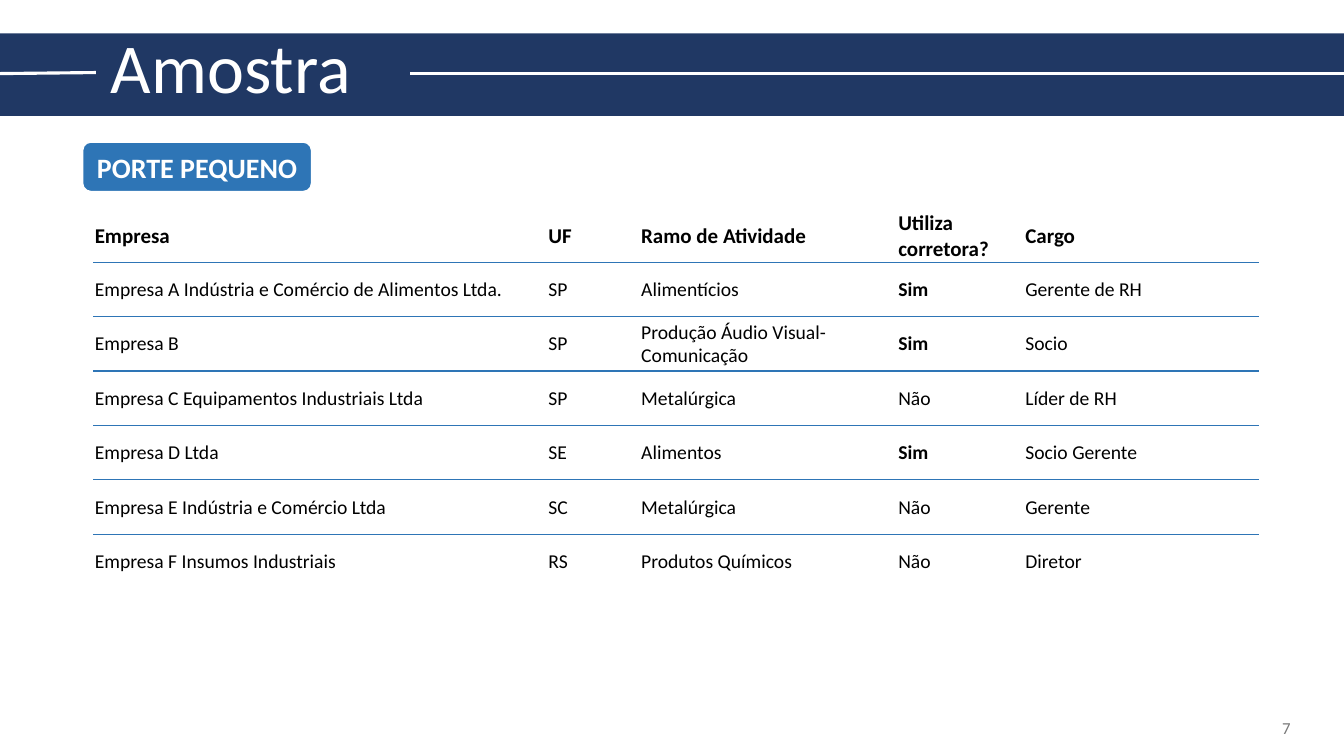
"""Build the sample slide listing the small companies surveyed."""
from lxml.etree import SubElement
from pptx import Presentation
from pptx.dml.color import RGBColor
from pptx.enum.shapes import MSO_CONNECTOR, MSO_SHAPE
from pptx.enum.text import MSO_ANCHOR, MSO_AUTO_SIZE, PP_ALIGN
from pptx.oxml.ns import qn
from pptx.util import Inches, Pt

FONT = "Calibri"
NAVY, BLUE, WHITE, BLACK, GRAY = "203864", "2E75B6", "FFFFFF", "000000", "797979"
COLUMN_WIDTHS = [4.5, 0.92, 2.55, 1.26, 2.32]
HEADER_HEIGHT, ROW_HEIGHT = 0.41, 0.54
ROWS = [
    ["Empresa", "UF", "Ramo de Atividade", "Utiliza corretora?", "Cargo"],
    ["Empresa A Indústria e Comércio de Alimentos Ltda.", "SP", "Alimentícios", "Sim", "Gerente de RH"],
    ["Empresa B", "SP", "Produção Áudio Visual-Comunicação", "Sim", "Socio"],
    ["Empresa C Equipamentos Industriais Ltda", "SP", "Metalúrgica", "Não", "Líder de RH"],
    ["Empresa D Ltda", "SE", "Alimentos", "Sim", "Socio Gerente"],
    ["Empresa E Indústria e Comércio Ltda", "SC", "Metalúrgica", "Não", "Gerente"],
    ["Empresa F Insumos Industriais", "RS", "Produtos Químicos", "Não", "Diretor"],
]


def color(value):
    return RGBColor.from_string(value)


def place(shape, left, top, width, height):
    shape.left, shape.top = Inches(left), Inches(top)
    shape.width, shape.height = Inches(width), Inches(height)


def write(text_frame, text, size, text_color, bold=False, align=PP_ALIGN.LEFT):
    text_frame.text = text
    paragraph = text_frame.paragraphs[0]
    paragraph.alignment = align
    font = paragraph.font
    font.name, font.size, font.bold = FONT, Pt(size), bold
    font.color.rgb = color(text_color)
    return paragraph


def add_block(slide, kind, box, fill, line=None):
    shape = slide.shapes.add_shape(kind, *map(Inches, box))
    shape.shadow.inherit = False
    shape.fill.solid()
    shape.fill.fore_color.rgb = color(fill)
    if line:
        shape.line.color.rgb = color(line)
        shape.line.width = Pt(1)
    else:
        shape.line.fill.background()
    return shape


def add_rule(slide, *ends):
    rule = slide.shapes.add_connector(MSO_CONNECTOR.STRAIGHT, *map(Inches, ends))
    rule.line.color.rgb = color(WHITE)
    rule.line.width = Pt(2.25)
    SubElement(rule._element.spPr, qn("a:effectLst"))


def add_title(slide, text):
    title = slide.shapes.title
    place(title, 1, 0.46, 10.65, 0.71)
    frame = title.text_frame
    frame.auto_size = MSO_AUTO_SIZE.NONE
    frame.vertical_anchor = MSO_ANCHOR.TOP
    write(frame, text, 50, WHITE).line_spacing = Pt(40)
    slide.shapes._spTree.append(title._element)


def set_borders(cell, top, bottom):
    properties = cell._tc.get_or_add_tcPr()
    sides = {"a:lnL": WHITE, "a:lnR": WHITE, "a:lnT": top, "a:lnB": bottom}
    for tag, value in sides.items():
        border = SubElement(properties, qn(tag), w=str(Pt(1)))
        fill = SubElement(border, qn("a:solidFill"))
        SubElement(fill, qn("a:srgbClr"), val=value)


def fill_cell(cell, text, row_index):
    is_header = row_index == 0
    is_last = row_index == len(ROWS) - 1
    cell.margin_left = cell.margin_right = cell.margin_top = Inches(0.01)
    cell.margin_bottom = 0
    cell.vertical_anchor = MSO_ANCHOR.MIDDLE
    write(cell.text_frame, text, 15 if is_header else 14, BLACK, is_header or text == "Sim")
    set_borders(cell, WHITE if is_header else BLUE, WHITE if is_last else BLUE)
    cell.fill.background()


def add_company_table(slide):
    height = HEADER_HEIGHT + ROW_HEIGHT * (len(ROWS) - 1)
    table = slide.shapes.add_table(
        len(ROWS), len(COLUMN_WIDTHS), Inches(0.93), Inches(2.08),
        Inches(sum(COLUMN_WIDTHS)), Inches(height)).table
    table.first_row = table.horz_banding = False
    for column, width in zip(table.columns, COLUMN_WIDTHS):
        column.width = Inches(width)
    for row_index, texts in enumerate(ROWS):
        row = table.rows[row_index]
        row.height = Inches(ROW_HEIGHT if row_index else HEADER_HEIGHT)
        for cell, text in zip(row.cells, texts):
            fill_cell(cell, text, row_index)


def add_size_badge(slide, text):
    badge = add_block(slide, MSO_SHAPE.ROUNDED_RECTANGLE, (0.82, 1.41, 2.27, 0.49), BLUE, WHITE)
    badge.text_frame.word_wrap = True
    badge.text_frame.vertical_anchor = MSO_ANCHOR.MIDDLE
    write(badge.text_frame, text, 20, WHITE, True, PP_ALIGN.CENTER)


def add_page_number(slide, text):
    box = slide.shapes.add_textbox(Inches(9.9), Inches(7.02), Inches(3), Inches(0.4))
    box.text_frame.word_wrap = True
    box.text_frame.vertical_anchor = MSO_ANCHOR.MIDDLE
    write(box.text_frame, text, 12, GRAY, align=PP_ALIGN.RIGHT)


def main():
    presentation = Presentation()
    presentation.slide_width, presentation.slide_height = Inches(13.33), Inches(7.5)
    slide = presentation.slides.add_slide(presentation.slide_layouts[5])
    add_block(slide, MSO_SHAPE.RECTANGLE, (0, 0.33, 13.33, 0.82), NAVY)
    add_rule(slide, 4.07, 0.73, 13.33, 0.73)
    add_rule(slide, 0.95, 0.72, 0, 0.73)
    add_title(slide, "Amostra")
    add_company_table(slide)
    add_size_badge(slide, "PORTE PEQUENO")
    add_page_number(slide, "7")
    presentation.save("out.pptx")


if __name__ == "__main__":
    main()
